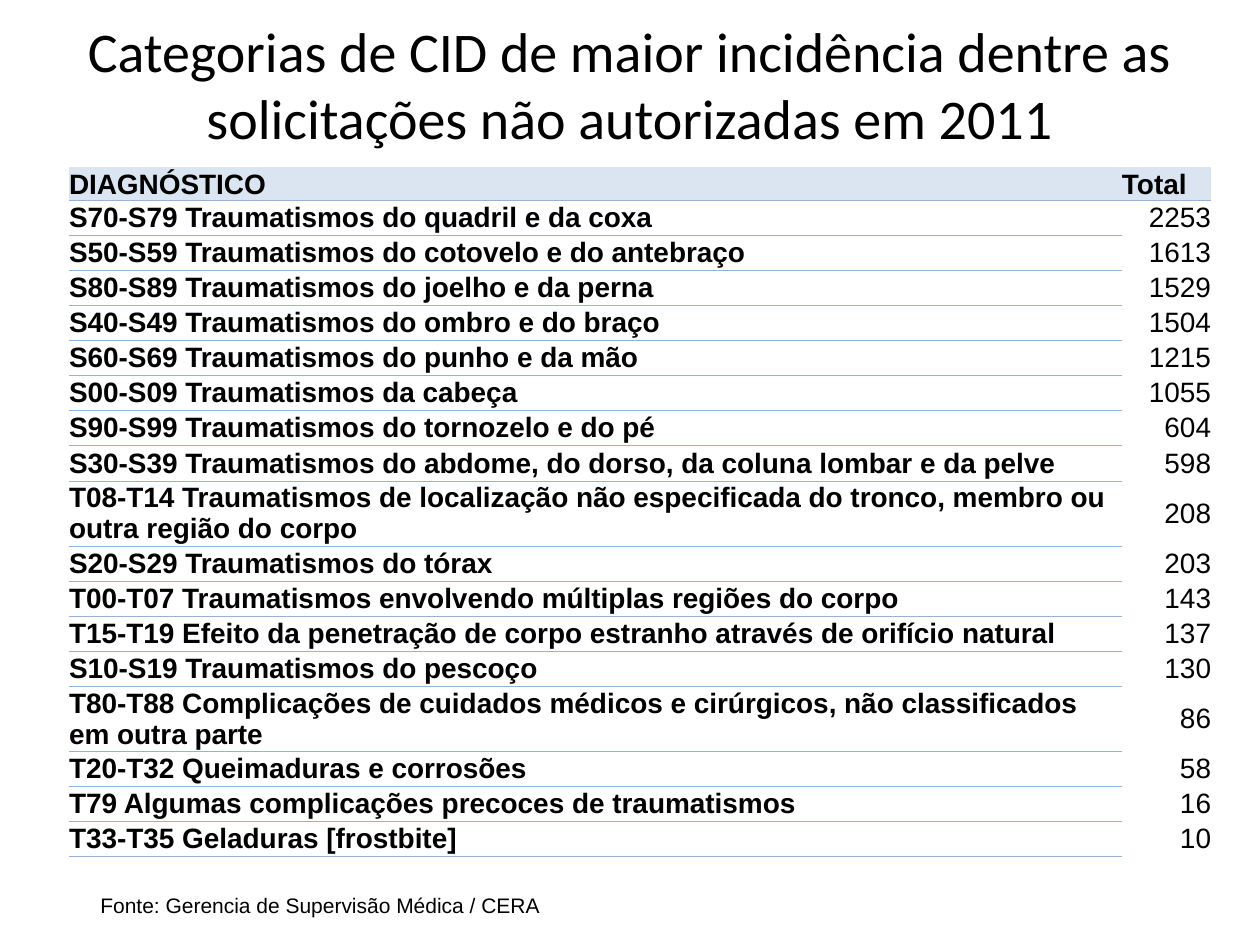
"""Build a slide with a table of the diagnosis categories most often refused in 2011."""
from dataclasses import dataclass

from lxml import etree
from pptx import Presentation
from pptx.dml.color import RGBColor
from pptx.enum.text import MSO_ANCHOR, PP_ALIGN
from pptx.oxml.ns import qn
from pptx.util import Emu, Pt

LEFT, CENTER, RIGHT = PP_ALIGN.LEFT, PP_ALIGN.CENTER, PP_ALIGN.RIGHT
TOP, MIDDLE, BOTTOM = MSO_ANCHOR.TOP, MSO_ANCHOR.MIDDLE, MSO_ANCHOR.BOTTOM

TITLE = "Categorias de CID de maior incidência dentre as solicitações não autorizadas em 2011"
SOURCE = "Fonte: Gerencia de Supervisão Médica / CERA"
HEADER = ("DIAGNÓSTICO", "Total")
DIAGNOSES = [
    ("S70-S79 Traumatismos do quadril e da coxa", 2253),
    ("S50-S59 Traumatismos do cotovelo e do antebraço", 1613),
    ("S80-S89 Traumatismos do joelho e da perna", 1529),
    ("S40-S49 Traumatismos do ombro e do braço", 1504),
    ("S60-S69 Traumatismos do punho e da mão", 1215),
    ("S00-S09 Traumatismos da cabeça", 1055),
    ("S90-S99 Traumatismos do tornozelo e do pé", 604),
    ("S30-S39 Traumatismos do abdome, do dorso, da coluna lombar e da pelve", 598),
    ("T08-T14 Traumatismos de localização não especificada do tronco, membro ou outra região do corpo", 208),
    ("S20-S29 Traumatismos do tórax", 203),
    ("T00-T07 Traumatismos envolvendo múltiplas regiões do corpo", 143),
    ("T15-T19 Efeito da penetração de corpo estranho através de orifício natural", 137),
    ("S10-S19 Traumatismos do pescoço", 130),
    ("T80-T88 Complicações de cuidados médicos e cirúrgicos, não classificados em outra parte", 86),
    ("T20-T32 Queimaduras e corrosões", 58),
    ("T79 Algumas complicações precoces de traumatismos", 16),
    ("T33-T35 Geladuras [frostbite]", 10),
]

SLIDE_SIZE = (1260, 945)
TITLE_BOX = (0, 0, 1260, 157)
SOURCE_BOX = (88, 886, 1172, 38)
TABLE_LEFT, TABLE_TOP, TABLE_HEIGHT = 69, 167, 690
COLUMN_WIDTHS = (1053, 89)
HEADER_HEIGHT, TALL_HEIGHT = 33, 65
LINE_CAPACITY = 75
PLAIN_TABLE_STYLE = "{2D5ABB26-0587-4C30-8999-92F81FD0307C}"


@dataclass(frozen=True)
class Theme:
    text: str = "000000"
    header_fill: str = "DBE5F1"
    rule: str = "95B3D7"
    rule_width: float = 0.5
    title_font: str = "Calibri"
    body_font: str = "Arial"
    title_size: int = 32
    table_size: int = 16
    source_size: int = 12


THEME = Theme()


def px(value):
    return Emu(round(value * 914400 / 126))


def write(text_frame, text, font_name, size, bold=False, align=LEFT):
    paragraph = text_frame.paragraphs[0]
    paragraph.alignment = align
    run = paragraph.add_run()
    run.text = text
    run.font.name = font_name
    run.font.size = Pt(size)
    run.font.bold = bold
    run.font.color.rgb = RGBColor.from_string(THEME.text)


def add_text(slide, box, text, font_name, size, align, anchor):
    text_frame = slide.shapes.add_textbox(*map(px, box)).text_frame
    text_frame.word_wrap = True
    text_frame.vertical_anchor = anchor
    write(text_frame, text, font_name, size, align=align)


def set_borders(cell, ruled_sides):
    properties = cell._tc.get_or_add_tcPr()
    for side in "LRTB":
        line = etree.SubElement(properties, qn(f"a:ln{side}"), w=str(Pt(THEME.rule_width)))
        if side in ruled_sides:
            fill = etree.SubElement(line, qn("a:solidFill"))
            etree.SubElement(fill, qn("a:srgbClr"), val=THEME.rule)
        else:
            etree.SubElement(line, qn("a:noFill"))


def fill_cell(cell, text, is_header, is_total, ruled_sides):
    set_borders(cell, ruled_sides)
    if is_header:
        cell.fill.solid()
        cell.fill.fore_color.rgb = RGBColor.from_string(THEME.header_fill)
    else:
        cell.fill.background()
    cell.margin_left = cell.margin_right = cell.margin_top = cell.margin_bottom = 0
    cell.vertical_anchor = BOTTOM if is_header else MIDDLE
    is_number = is_total and not is_header
    write(cell.text_frame, text, THEME.body_font, THEME.table_size,
          bold=not is_number, align=RIGHT if is_number else LEFT)


def add_diagnosis_table(slide):
    rows = [HEADER, *DIAGNOSES]
    tall = [len(name) > LINE_CAPACITY for name, total in rows]
    single_count = len(DIAGNOSES) - sum(tall)
    single_height = (TABLE_HEIGHT - HEADER_HEIGHT - TALL_HEIGHT * sum(tall)) / single_count
    frame = slide.shapes.add_table(len(rows), len(HEADER), px(TABLE_LEFT), px(TABLE_TOP),
                                   px(sum(COLUMN_WIDTHS)), px(TABLE_HEIGHT))
    table = frame.table
    table.first_row = table.horz_banding = False
    table._tbl.tblPr.find(qn("a:tableStyleId")).text = PLAIN_TABLE_STYLE
    for column, width in zip(table.columns, COLUMN_WIDTHS):
        column.width = px(width)
    for row_index, values in enumerate(rows):
        is_header = row_index == 0
        body_height = TALL_HEIGHT if tall[row_index] else single_height
        table.rows[row_index].height = px(HEADER_HEIGHT if is_header else body_height)
        for column_index, value in enumerate(values):
            is_total = column_index == 1
            if is_header:
                ruled_sides = "B"
            elif is_total:
                ruled_sides = "T" if row_index == 1 else ""
            else:
                ruled_sides = "TB"
            fill_cell(table.cell(row_index, column_index), str(value),
                      is_header, is_total, ruled_sides)


def main():
    presentation = Presentation()
    presentation.slide_width, presentation.slide_height = map(px, SLIDE_SIZE)
    slide = presentation.slides.add_slide(presentation.slide_layouts[6])
    add_diagnosis_table(slide)
    add_text(slide, TITLE_BOX, TITLE, THEME.title_font, THEME.title_size, CENTER, BOTTOM)
    add_text(slide, SOURCE_BOX, SOURCE, THEME.body_font, THEME.source_size, LEFT, TOP)
    presentation.save("out.pptx")


if __name__ == "__main__":
    main()
